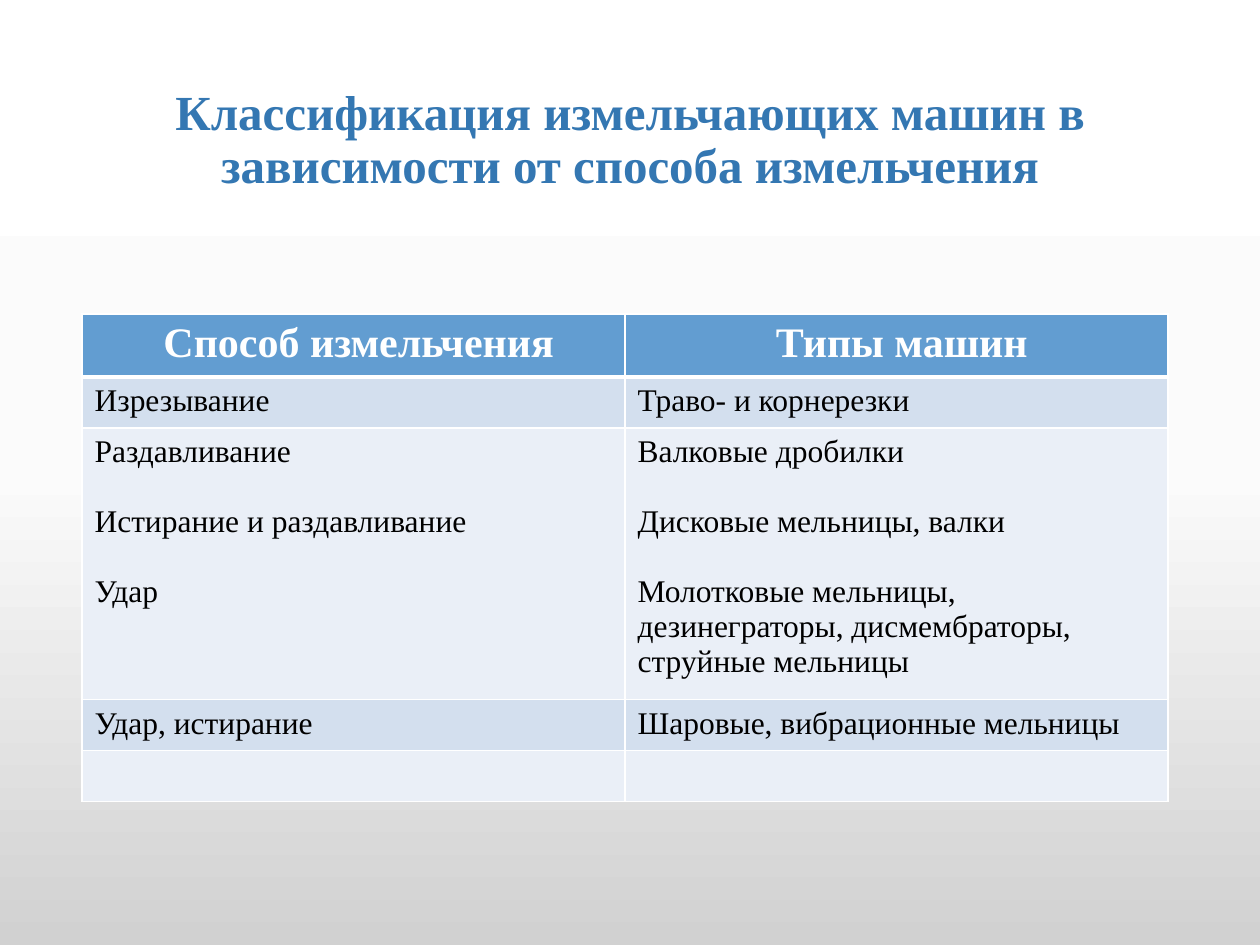
"""Build a slide that classes grinding machines by method of grinding."""
import copy
from dataclasses import dataclass

import pptx
import pptx.dml.color
import pptx.enum.text
import pptx.oxml
import pptx.oxml.ns
import pptx.util

SCALE = 914400 / 126
FONT = "Times New Roman"
COLORS = {
    "title": "3477B2",
    "head": "629DD1",
    "odd": "D3DFEE",
    "even": "EAEFF7",
    "white": "FFFFFF",
    "black": "000000",
}
STOPS = [(0, "FFFFFF"), (0.5, "FBFBFB"), (1, "D1D1D1")]
CENTER = pptx.enum.text.PP_ALIGN.CENTER
LEFT = pptx.enum.text.PP_ALIGN.LEFT


@dataclass
class Style:
    size: int
    color: str
    bold: bool
    align: int
    gap: int = 0
    lead: float = 1.0


@dataclass
class Row:
    high: int
    fill: str
    style: Style
    cells: tuple[str, str]
    top: int = 1
    base: int = 1


TITLE = Style(28, "title", True, CENTER, lead=0.9)
HEAD = Style(24, "white", True, CENTER)
BODY = Style(18, "black", False, LEFT, gap=20)

ROWS = [
    Row(58, "head", HEAD, (" Способ измельчения", " Типы машин"), base=3),
    Row(51, "odd", BODY, ("Изрезывание", "Траво- и корнерезки"), top=3),
    Row(257, "even", BODY, (
        "Раздавливание\nИстирание и раздавливание\nУдар",
        "Валковые дробилки\nДисковые мельницы, валки\n"
        "Молотковые мельницы, дезинеграторы, дисмембраторы, струйные мельницы",
    )),
    Row(51, "odd", BODY, ("Удар, истирание", "Шаровые, вибрационные мельницы")),
    Row(51, "even", BODY, ("", "")),
]


def px(n: int) -> int:
    return pptx.util.Emu(round(n * SCALE))


def rgb(code: str) -> pptx.dml.color.RGBColor:
    return pptx.dml.color.RGBColor.from_string(code)


def write(frame, text: str, style: Style) -> None:
    frame.text = text
    for i, para in enumerate(frame.paragraphs):
        para.alignment = style.align
        para.line_spacing = style.lead
        para.space_before = pptx.util.Pt(style.gap if i else 0)
        for run in para.runs:
            font = run.font
            font.name = FONT
            font.size = pptx.util.Pt(style.size)
            font.bold = style.bold
            font.color.rgb = rgb(COLORS[style.color])


def shade(slide) -> None:
    fill = slide.background.fill
    fill.gradient()
    fill.gradient_angle = 270
    first = fill.gradient_stops[0]._gs
    first.addnext(copy.deepcopy(first))
    for stop, (pos, code) in zip(fill.gradient_stops, STOPS):
        stop.position = pos
        stop.color.rgb = rgb(code)


def edge(cell, side: str, width: int) -> None:
    line = pptx.oxml.parse_xml(
        f'<a:ln{side} {pptx.oxml.ns.nsdecls("a")} w="{pptx.util.Pt(width)}">'
        f'<a:solidFill><a:srgbClr val="{COLORS["white"]}"/></a:solidFill>'
        f'</a:ln{side}>'
    )
    cell._tc.get_or_add_tcPr().append(line)


def head(slide) -> None:
    box = slide.shapes.add_textbox(px(87), px(50), px(1086), px(183))
    frame = box.text_frame
    frame.word_wrap = True
    frame.vertical_anchor = pptx.enum.text.MSO_ANCHOR.MIDDLE
    write(
        frame,
        "Классификация измельчающих машин в зависимости от способа измельчения",
        TITLE,
    )


def grid(slide, rows: list[Row]) -> None:
    high = sum(row.high for row in rows)
    table = slide.shapes.add_table(
        len(rows), 2, px(82), px(314), px(1086), px(high)
    ).table
    for r, row in enumerate(rows):
        table.rows[r].height = px(row.high)
        for c, text in enumerate(row.cells):
            cell = table.cell(r, c)
            for side, width in zip("LRTB", (1, 1, row.top, row.base)):
                edge(cell, side, width)
            cell.fill.solid()
            cell.fill.fore_color.rgb = rgb(COLORS[row.fill])
            write(cell.text_frame, text, row.style)


def main() -> None:
    deck = pptx.Presentation()
    deck.slide_width, deck.slide_height = px(1260), px(945)
    slide = deck.slides.add_slide(deck.slide_layouts[6])
    shade(slide)
    head(slide)
    grid(slide, ROWS)
    deck.save("out.pptx")


if __name__ == "__main__":
    main()
